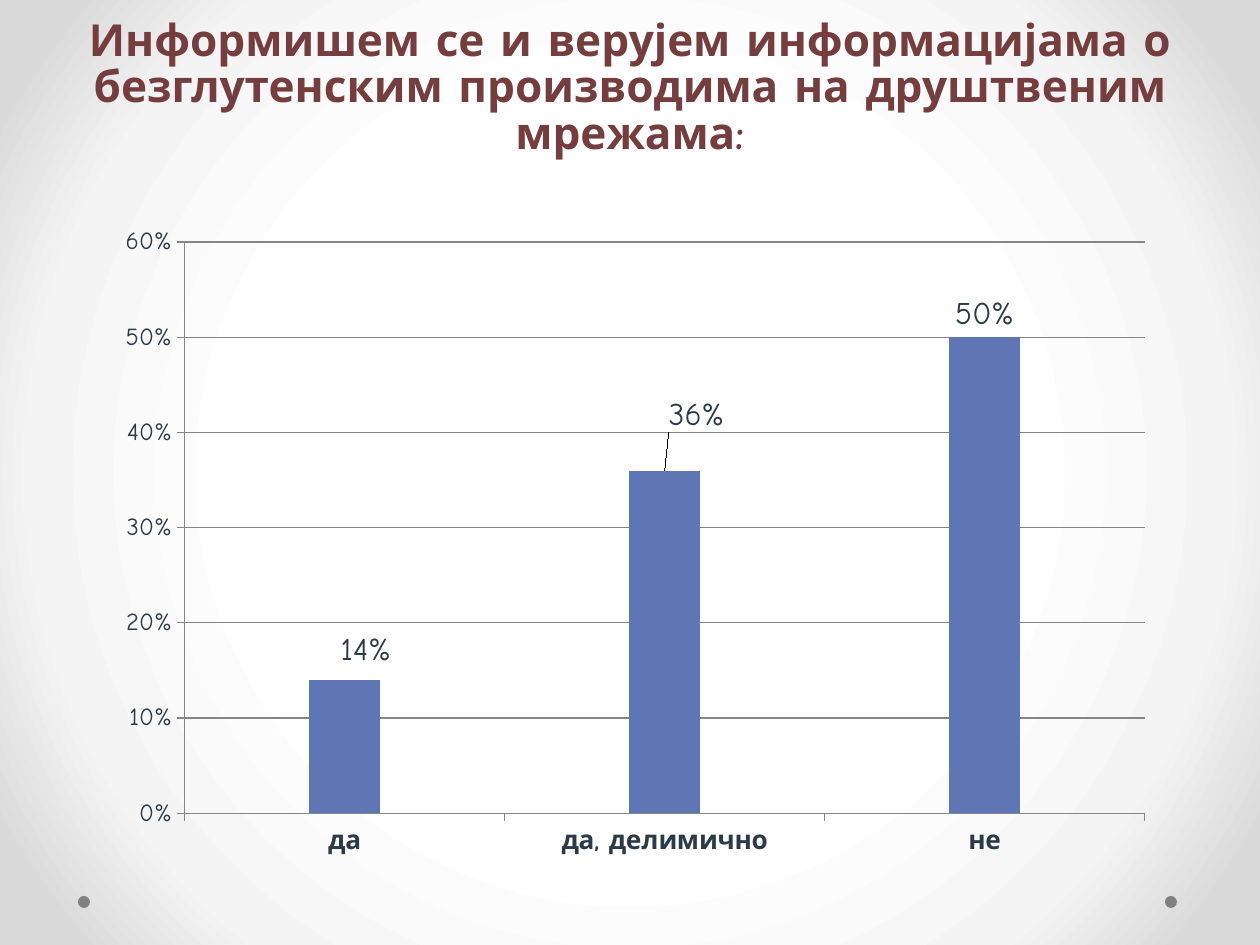
from lxml import etree
from pptx import Presentation
from pptx import util as u
from pptx.chart.data import CategoryChartData
from pptx.dml.color import RGBColor
from pptx.enum import chart as ch, shapes, text
from pptx.oxml.ns import qn

WHITE = RGBColor(0xFF, 0xFF, 0xFF)
PALE = RGBColor(0xF4, 0xF4, 0xF4)
SILVER = RGBColor(0xDA, 0xDA, 0xDA)
GRAY = RGBColor(0x80, 0x80, 0x80)
GRID = RGBColor(0x86, 0x86, 0x86)
MAROON = RGBColor(0x75, 0x3D, 0x3D)
NAVY = RGBColor(0x2B, 0x39, 0x49)
BLUE = RGBColor(0x60, 0x76, 0xB4)
FONT = "Comic Neue"


def px(n):
    return u.Emu(round(n * 914400 / 126))


class Deck:
    def __init__(self, width, height):
        self.prs = Presentation()
        self.prs.slide_width, self.prs.slide_height = px(width), px(height)
        self.s = self.prs.slides.add_slide(self.prs.slide_layouts[6])

    def style(self, font, size, color, bold=False):
        font.name, font.size, font.bold = FONT, u.Pt(size), bold
        font.color.rgb = color

    def background(self, stops):
        self.s.background.fill.gradient()
        grad = self.s.element.find(".//" + qn("a:gradFill"))
        for child in list(grad):
            grad.remove(child)
        gs_list = etree.SubElement(grad, qn("a:gsLst"))
        for pos, color in stops:
            gs = etree.SubElement(gs_list, qn("a:gs"), pos=str(pos * 1000))
            etree.SubElement(gs, qn("a:srgbClr"), val=str(color))
        circle = etree.SubElement(grad, qn("a:path"), path="circle")
        etree.SubElement(circle, qn("a:fillToRect"),
                         {side: "50000" for side in "ltrb"})

    def dot(self, x, y, size):
        sp = self.s.shapes.add_shape(shapes.MSO_SHAPE.OVAL,
                                     px(x), px(y), px(size), px(size))
        sp.shadow.inherit = False
        sp.fill.solid()
        sp.fill.fore_color.rgb = GRAY
        sp.line.fill.background()

    def title(self, x, y, w, h, words):
        tf = self.s.shapes.add_textbox(px(x), px(y), px(w), px(h)).text_frame
        tf.word_wrap = True
        tf.vertical_anchor = text.MSO_ANCHOR.BOTTOM
        p = tf.paragraphs[0]
        p.text = words
        p.alignment = text.PP_ALIGN.CENTER
        p.line_spacing = 0.88
        self.style(p.font, 25.2, MAROON, bold=True)

    def layout(self, parent, index, **values):
        for old in parent.findall(qn("c:layout")):
            parent.remove(old)
        layout = etree.Element(qn("c:layout"))
        manual = etree.SubElement(layout, qn("c:manualLayout"))
        for tag, val in values.items():
            etree.SubElement(manual, qn("c:" + tag), val=str(val))
        parent.insert(index, layout)

    def axis(self, axis, size, bold=False):
        axis.major_tick_mark = ch.XL_TICK_MARK.OUTSIDE
        axis.minor_tick_mark = ch.XL_TICK_MARK.NONE
        axis.format.line.color.rgb = GRID
        axis.format.line.width = u.Pt(0.75)
        self.style(axis.tick_labels.font, size, NAVY, bold)

    def columns(self, x, y, w, h, values, label_shifts):
        data = CategoryChartData(number_format="0%")
        data.categories = values.keys()
        data.add_series("Series 1", values.values())
        chart = self.s.shapes.add_chart(
            ch.XL_CHART_TYPE.COLUMN_CLUSTERED,
            px(x), px(y), px(w), px(h), data).chart
        chart.has_title = chart.has_legend = False
        chart.font.name, chart.font.size = "Vollkorn", u.Pt(18)

        # Axes and gridlines
        self.axis(chart.category_axis, 15, bold=True)
        val = chart.value_axis
        self.axis(val, 14)
        val.minimum_scale, val.maximum_scale, val.major_unit = 0, 0.6, 0.1
        val.tick_labels.number_format = "0%"
        val.tick_labels.number_format_is_linked = False
        val.has_major_gridlines = True
        val.major_gridlines.format.line.color.rgb = GRID
        val.major_gridlines.format.line.width = u.Pt(0.75)

        # Bars
        plot = chart.plots[0]
        plot.gap_width = 348
        plot.vary_by_categories = False
        series = plot.series[0]
        series.format.fill.solid()
        series.format.fill.fore_color.rgb = BLUE

        # Value labels, some moved off their bars
        labels = series.data_labels
        labels.show_value = True
        labels.number_format, labels.number_format_is_linked = "0%", False
        labels.position = ch.XL_LABEL_POSITION.OUTSIDE_END
        self.style(labels.font, 18, NAVY)
        for i in label_shifts:
            label = series.points[i].data_label
            label.position = ch.XL_LABEL_POSITION.OUTSIDE_END
            self.style(label.font, 18, NAVY)
        root = chart.element
        for dlbl, (dx, dy) in zip(root.iter(qn("c:dLbl")), label_shifts.values()):
            self.layout(dlbl, 1, x=dx, y=dy)
        self.layout(root.find(".//" + qn("c:plotArea")), 0,
                    layoutTarget="inner", xMode="edge", yMode="edge",
                    x=0.075, y=0.043, w=0.904, h=0.872)


def main():
    deck = Deck(1260, 945)
    deck.background([(50, WHITE), (76, PALE), (92, SILVER)])

    # Corner dots
    for x in (1165, 78):
        deck.dot(x, 896, 12)

    deck.title(15, 37, 1230, 128,
               "Информишем се и верујем информацијама о безглутенским "
               "производима на друштвеним мрежама:")

    deck.columns(105, 214, 1062, 655,
                 {"да": 0.14, "да, делимично": 0.36, "не": 0.5},
                 {0: (0.02, -0.01), 1: (0.03, -0.05)})

    deck.prs.save("out.pptx")


if __name__ == "__main__":
    main()
